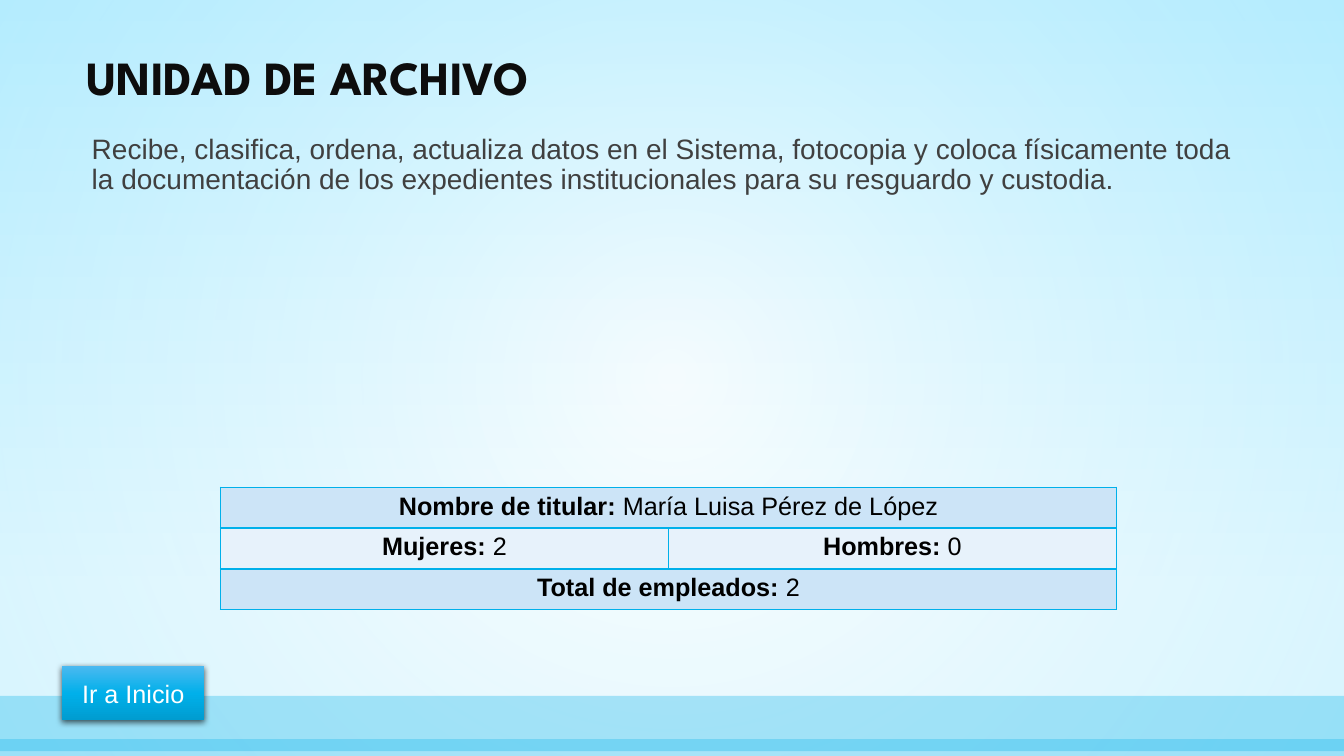
"""Build the slide about the archive unit."""
from lxml.etree import SubElement
from pptx import Presentation
from pptx.dml.color import RGBColor
from pptx.enum.shapes import MSO_SHAPE
from pptx.enum.text import MSO_ANCHOR, MSO_AUTO_SIZE, PP_ALIGN
from pptx.oxml import parse_xml
from pptx.oxml.ns import nsdecls, qn
from pptx.util import Pt

HUES = {
    "title": "0D0D0D", "body": "404040", "cell": "000000", "label": "FFFFFF",
    "main": "00B0EA", "dark": "CCE4F7", "light": "E7F2FB",
    "sky": "C8F1FF", "glow": "FFFFFF", "edge": "91E4FF",
    "top": "4BB9F0", "base": "009CD0", "shade": "000000",
}


class Deck:
    """Hold the style and the current slide."""

    def __init__(self, wide, high):
        self.show = Presentation()
        self.show.slide_width, self.show.slide_height = Pt(wide), Pt(high)
        self.slide = self.show.slides.add_slide(self.show.slide_layouts[1])
        self.shapes = self.slide.shapes

    def font(self, run, size, hue, bold=False, face="Arial"):
        run.font.name, run.font.size, run.font.bold = face, Pt(size), bold
        run.font.color.rgb = RGBColor.from_string(HUES[hue])

    def tint(self, node, hue, alpha):
        color = SubElement(node, qn("a:srgbClr"), val=HUES[hue])
        if alpha < 100:
            SubElement(color, qn("a:alpha"), val=str(alpha * 1000))

    def blend(self, owner, stops, round=False):
        owner.fill.background()
        root = self.slide.element if owner is self.back else owner.element
        grad = parse_xml(f'<a:gradFill {nsdecls("a")} rotWithShape="1"/>')
        row = SubElement(grad, qn("a:gsLst"))
        for spot, hue, alpha in stops:
            stop = SubElement(row, qn("a:gs"), pos=str(spot * 1000))
            self.tint(stop, hue, alpha)
        if round:
            way = SubElement(grad, qn("a:path"), {"path": "circle"})
            SubElement(way, qn("a:fillToRect"),
                       {side: "50000" for side in "ltrb"})
        else:
            SubElement(grad, qn("a:lin"), ang="5400000", scaled="0")
        old = root.find(".//" + qn("a:noFill"))
        old.getparent().replace(old, grad)

    def ground(self, stops):
        self.back = self.slide.background
        self.blend(self.back, stops)

    def rect(self, x, y, w, h, stops, round=False):
        box = self.shapes.add_shape(
            MSO_SHAPE.RECTANGLE, Pt(x), Pt(y), Pt(w), Pt(h))
        self.blend(box, stops, round)
        box.line.fill.background()
        box.shadow.inherit = False
        return box

    def band(self, y, h, alpha):
        box = self.rect(0, y, 960, h, [(0, "main", alpha), (100, "main", alpha)])
        box.fill.solid()
        box.fill.fore_color.rgb = RGBColor.from_string(HUES["main"])
        color = box.element.spPr.find(qn("a:solidFill"))[0]
        SubElement(color, qn("a:alpha"), val=str(alpha * 1000))

    def button(self, x, y, w, h, text, stops):
        box = self.rect(x, y, w, h, stops)
        glow = box.element.spPr.find(qn("a:effectLst"))
        cast = SubElement(glow, qn("a:outerShdw"), blurRad=str(Pt(4.5)),
                          dist=str(Pt(1.5)), dir="5400000", rotWithShape="0")
        self.tint(cast, "shade", 63)
        frame = box.text_frame
        frame.text = text
        frame.word_wrap = True
        frame.vertical_anchor = MSO_ANCHOR.MIDDLE
        frame.paragraphs[0].alignment = PP_ALIGN.CENTER
        self.font(frame.paragraphs[0].runs[0], 18, "label")

    def holder(self, slot, x, y, w, h, text, anchor, **style):
        box = self.slide.placeholders[slot]
        self.shapes.element.append(box.element)
        box.left, box.top, box.width, box.height = Pt(x), Pt(y), Pt(w), Pt(h)
        frame = box.text_frame
        frame.text = text
        frame.auto_size = MSO_AUTO_SIZE.NONE
        frame.vertical_anchor = anchor
        para = frame.paragraphs[0]
        para.alignment, para.line_spacing = PP_ALIGN.LEFT, 0.9
        self.font(para.runs[0], **style)
        return para

    def title(self, text):
        self.holder(0, 54.7, 34.6, 845.3, 44.6, text, MSO_ANCHOR.BOTTOM,
                    size=34, hue="title", bold=True, face="League Spartan")

    def body(self, text):
        para = self.holder(1, 54.7, 92.9, 845.3, 378.7, text, MSO_ANCHOR.TOP,
                           size=20, hue="body")
        para.space_before = Pt(18)
        props = para.runs[0].font and para._p.get_or_add_pPr()
        props.set("marL", str(Pt(3.6)))
        props.set("indent", "0")
        SubElement(props, qn("a:buNone"))

    def cell(self, cell, parts, hue):
        para = cell.text_frame.paragraphs[0]
        para.alignment = PP_ALIGN.CENTER
        for spot, text in enumerate(parts):
            run = para.add_run()
            run.text = text
            self.font(run, 18, "cell", bold=spot == 0)

    def frame(self, cell, hue):
        props = cell._tc.get_or_add_tcPr()
        for side in "LRTB":
            line = SubElement(props, qn("a:ln" + side), w=str(Pt(1)))
            self.tint(SubElement(line, qn("a:solidFill")), "main", 100)
        cell.fill.solid()
        cell.fill.fore_color.rgb = RGBColor.from_string(HUES[hue])

    def table(self, x, y, w, h, rows):
        cols = max(len(row) for row in rows)
        grid = self.shapes.add_table(
            len(rows), cols, Pt(x), Pt(y), Pt(w), Pt(h)).table
        for r, row in enumerate(rows):
            hue = "light" if r % 2 else "dark"
            for c in range(cols):
                self.frame(grid.cell(r, c), hue)
            if len(row) < cols:
                grid.cell(r, 0).merge(grid.cell(r, cols - 1))
            for c, parts in enumerate(row):
                self.cell(grid.cell(r, c), parts, hue)


def main():
    deck = Deck(960, 540)
    deck.ground([(0, "sky", 56), (79, "glow", 100)])
    deck.rect(0, 0, 960, 540, [(0, "glow", 49), (100, "edge", 35)], round=True)
    deck.band(497, 39.6, 30)
    deck.band(528, 12, 28)
    deck.title("UNIDAD DE ARCHIVO")
    deck.body("Recibe, clasifica, ordena, actualiza datos en el Sistema, "
              "fotocopia y coloca físicamente toda la documentación de los "
              "expedientes institucionales para su resguardo y custodia.")
    deck.table(157.5, 348, 640, 87.6, [
        [("Nombre de titular: ", "María Luisa Pérez de López")],
        [("Mujeres:", " 2"), ("Hombres:", " 0")],
        [("Total de empleados:", " 2")],
    ])
    deck.button(44.4, 475.9, 101.5, 38.6, "Ir a Inicio",
                [(0, "top", 100), (50, "main", 100), (100, "base", 100)])
    deck.show.save("out.pptx")


if __name__ == "__main__":
    main()
